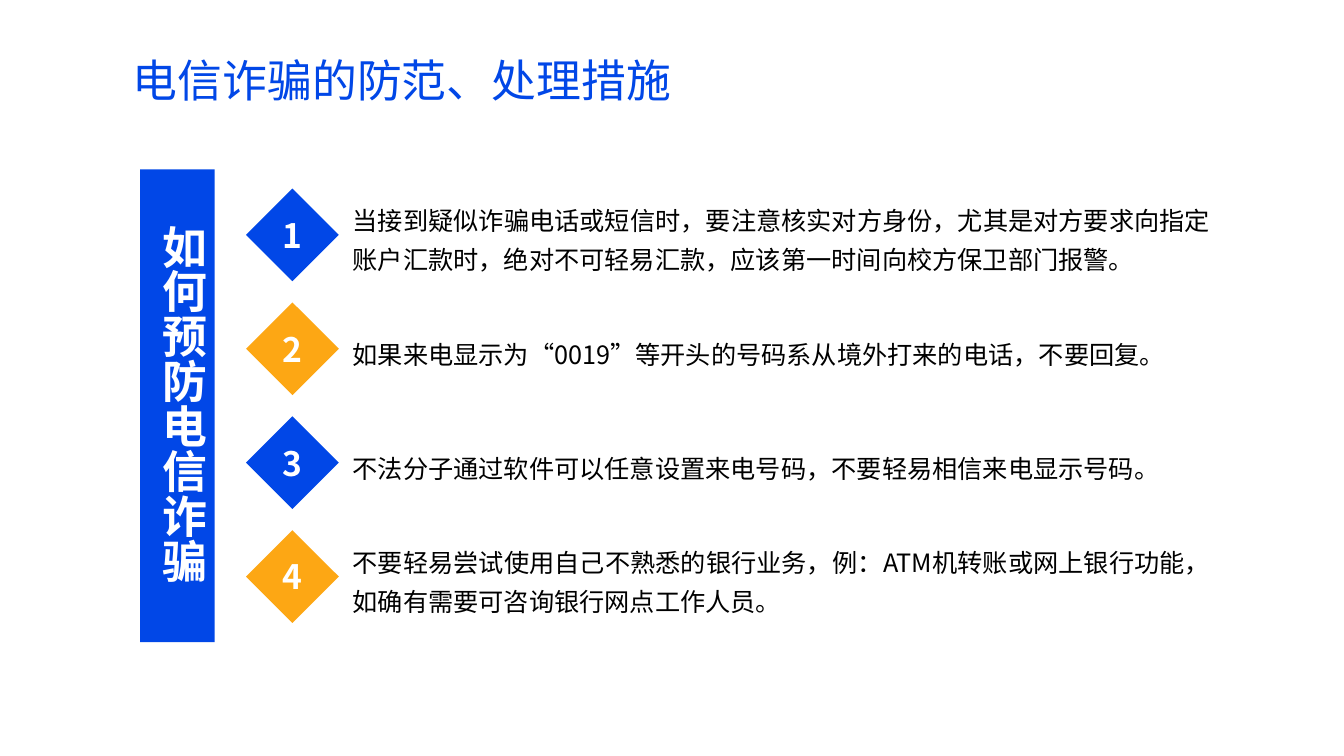
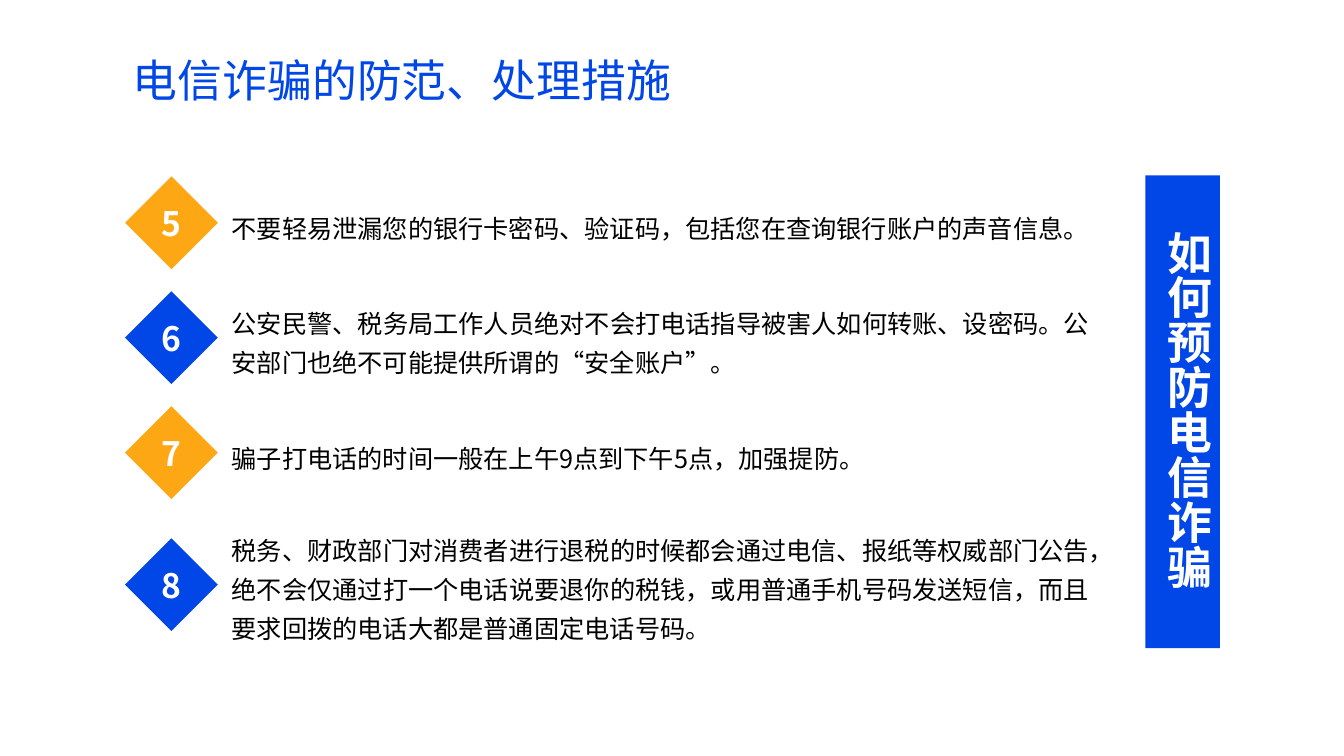
import pptx
import pptx.util
import pptx.dml.color
import pptx.enum.shapes
import pptx.enum.text
import pptx.oxml.ns
import lxml.etree

Inches = pptx.util.Inches
Shape = pptx.enum.shapes.MSO_SHAPE
Align = pptx.enum.text.PP_ALIGN
Anchor = pptx.enum.text.MSO_ANCHOR
Fit = pptx.enum.text.MSO_AUTO_SIZE
qn = pptx.oxml.ns.qn

# Shared style
FONT = "Noto Sans CJK SC"
BLUE, GOLD, WHITE, BLACK = "0147E7", "FDA714", "FFFFFF", "000000"
TITLE = "电信诈骗的防范、处理措施"
BAND = "如何预防电信诈骗"
SIDE = 0.92  # diamond width and height
LINE = 0.4   # height of one line of tip text

# Each tip: text, line count, extra gap above
PAGES = [
    dict(band=(1.39, 1.68), left=2.44, top=1.87, step=1.13, first=1, hues=(BLUE, GOLD), tips=[
        ("当接到疑似诈骗电话或短信时，要注意核实对方身份，尤其是对方要求向指定账户汇款时，绝对不可轻易汇款，应该第一时间向校方保卫部门报警。", 2, 0),
        ("如果来电显示为“0019”等开头的号码系从境外打来的电话，不要回复。", 1, 0),
        ("不法分子通过软件可以任意设置来电号码，不要轻易相信来电显示号码。", 1, 0),
        ("不要轻易尝试使用自己不熟悉的银行业务，例：ATM机转账或网上银行功能，如确有需要可咨询银行网点工作人员。", 2, 0),
    ]),
    dict(band=(11.36, 1.74), left=1.24, top=1.75, step=1.14, first=5, hues=(GOLD, BLUE), tips=[
        ("不要轻易泄漏您的银行卡密码、验证码，包括您在查询银行账户的声音信息。", 1, 0),
        ("公安民警、税务局工作人员绝对不会打电话指导被害人如何转账、设密码。公安部门也绝不可能提供所谓的“安全账户”。", 2, 0),
        ("骗子打电话的时间一般在上午9点到下午5点，加强提防。", 1, 0),
        ("税务、财政部门对消费者进行退税的时候都会通过电信、报纸等权威部门公告，绝不会仅通过打一个电话说要退你的税钱，或用普通手机号码发送短信，而且要求回拨的电话大都是普通固定电话号码。", 3, 0.17),
    ]),
]


def color(code):
    return pptx.dml.color.RGBColor.from_string(code)


def write(shape, text, size, hue, bold=False, align=None, space=None):
    """Fill a shape with one styled paragraph."""
    para = shape.text_frame.paragraphs[0]
    para.text = text
    para.alignment = align
    para.line_spacing = space
    font = para.font
    font.size, font.bold, font.name = pptx.util.Pt(size), bold, FONT
    font.color.rgb = color(hue)
    # East Asian typeface
    props = para._p.pPr.find(qn("a:defRPr"))
    lxml.etree.SubElement(props, qn("a:ea")).set("typeface", FONT)


def box(shapes, left, top, width, height, wrap=True, fit=Fit.SHAPE_TO_FIT_TEXT):
    item = shapes.add_textbox(*map(Inches, (left, top, width, height)))
    item.text_frame.word_wrap = wrap
    item.text_frame.auto_size = fit
    return item


def block(shapes, kind, left, top, width, height, hue):
    item = shapes.add_shape(kind, *map(Inches, (left, top, width, height)))
    item.shadow.inherit = False
    item.fill.solid()
    item.fill.fore_color.rgb = color(hue)
    item.line.fill.background()
    return item


def title(slide):
    item = box(slide.shapes, 1.22, 0.51, 11.5, 0.63, fit=Fit.NONE)
    item.text_frame.vertical_anchor = Anchor.MIDDLE
    write(item, TITLE, 32, BLUE, space=0.9)


def band(slide, left, top):
    shapes = slide.shapes.add_group_shape().shapes
    block(shapes, Shape.RECTANGLE, left, top, 0.74, 4.69, BLUE)
    label = box(shapes, left, top + 0.45, 0.74, 3.79, wrap=False)
    label.text_frame._txBody.bodyPr.set("vert", "eaVert")
    write(label, BAND, 32, WHITE, bold=True)


def tip(slide, left, top, num, hue, text, lines):
    shapes = slide.shapes.add_group_shape().shapes
    # Text is centred on the diamond's height
    tall = 0.06 + LINE * lines
    body = box(shapes, left + 0.96, top + (SIDE - tall) / 2, 8.7, tall)
    write(body, text, 18, BLACK, align=Align.JUSTIFY, space=1.3)
    mark = block(shapes, Shape.DIAMOND, left, top, SIDE, SIDE, hue)
    mark.text_frame.vertical_anchor = Anchor.MIDDLE
    write(mark, str(num), 24, WHITE, bold=True, align=Align.CENTER)


def main():
    deck = pptx.Presentation()
    deck.slide_width, deck.slide_height = Inches(13.33), Inches(7.5)
    for page in PAGES:
        slide = deck.slides.add_slide(deck.slide_layouts[6])
        title(slide)
        band(slide, *page["band"])
        for i, (text, lines, gap) in enumerate(page["tips"]):
            top = page["top"] + i * page["step"] + gap
            tip(slide, page["left"], top, page["first"] + i, page["hues"][i % 2], text, lines)
    deck.save("out.pptx")


if __name__ == "__main__":
    main()
